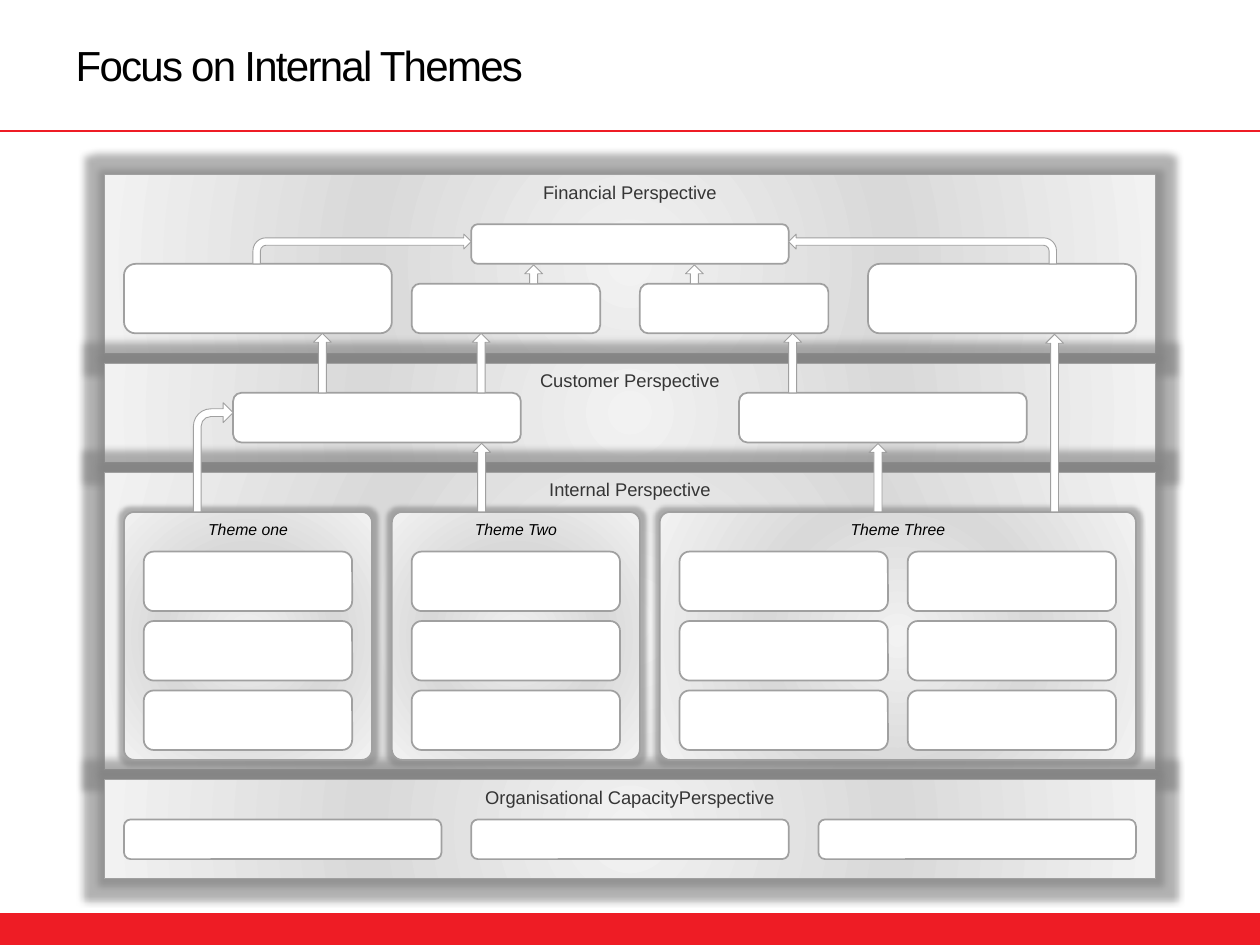
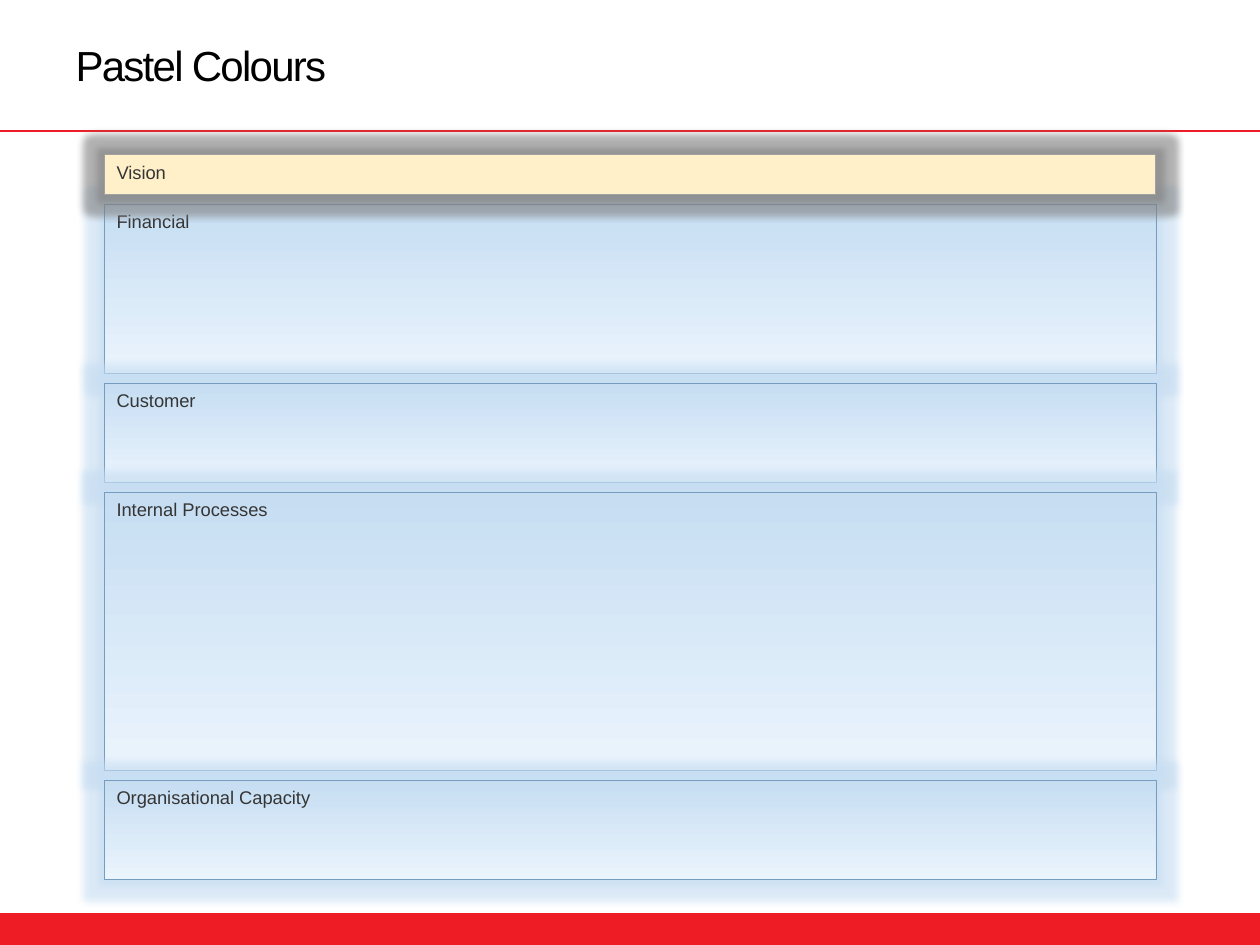
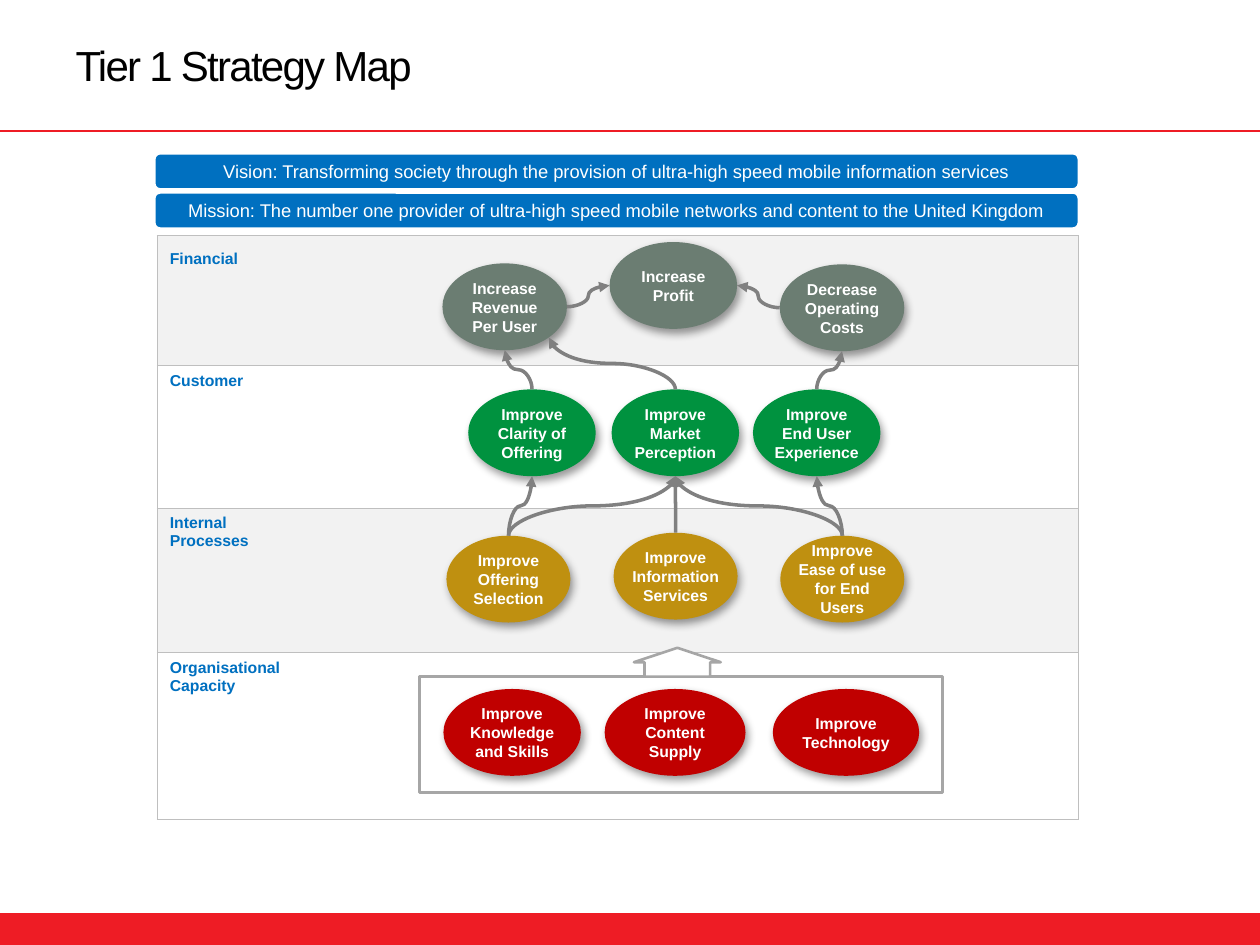
from pptx import Presentation
from pptx import util as u
from pptx.dml.color import RGBColor
from pptx.enum import shapes, text
from pptx.oxml import parse_xml
from pptx.oxml.ns import nsdecls, qn

RED, BLUE, WHITE, BLACK = "EE1C25", "0070C0", "FFFFFF", "000000"
GREY_LINE, DARK_TEXT = "A0A0A0", "353535"
SILVER = [(0, "F2F2F2"), (50, "D9D9D9"), (100, "F2F2F2")]
PASTEL = [(0, "C6DDF2"), (100, "EAF4FD")]
RADIAL = ('<a:path path="circle"><a:fillToRect l="50000" t="50000" '
          'r="50000" b="50000"/></a:path>')
DOWNWARD = '<a:lin ang="5400000" scaled="0"/>'
KIND = shapes.MSO_SHAPE
CENTER, LEFT = text.PP_ALIGN.CENTER, text.PP_ALIGN.LEFT
BAND_LEFT, BAND_WIDTH, BAND_GAP = 2.1, 21.2, 0.2


def rgb(value):
    return RGBColor.from_string(value)


def xml(tag, attributes="", content=""):
    return parse_xml(f'<a:{tag} {nsdecls("a")} {attributes}>{content}</a:{tag}>')


def tint(value, alpha):
    return f'<a:srgbClr val="{value}"><a:alpha val="{alpha * 1000}"/></a:srgbClr>'


def glow(value, points, alpha=60):
    return xml("glow", f'rad="{points * 12700}"', tint(value, alpha))


def soft_shadow():
    return xml("outerShdw", 'blurRad="63500" dist="38100" dir="3600000" '
               'algn="ctr" rotWithShape="0"', tint(BLACK, 40))


class Deck:
    def __init__(self):
        self.presentation = Presentation()
        self.presentation.slide_width = u.Cm(25.4)
        self.presentation.slide_height = u.Cm(19.05)
        self.slide = None

    def start(self, heading):
        """Open a slide with the title, the rule and the footer band."""
        self.slide = self.presentation.slides.add_slide(
            self.presentation.slide_layouts[5])
        self.shape(KIND.RECTANGLE, 0, 18.45, 25.4, 0.6, RED, RED, 2)
        self.line(shapes.MSO_CONNECTOR.STRAIGHT, (0, 2.64), (25.4, 2.64), RED, 1.5)
        title = self.slide.shapes.title
        title.left, title.top = u.Cm(1.27), u.Cm(0.38)
        title.width, title.height = u.Cm(18.52), u.Cm(1.83)
        frame = title.text_frame
        frame.auto_size = text.MSO_AUTO_SIZE.NONE
        frame.margin_top = frame.margin_bottom = 0
        self.label(frame, heading, 24, BLACK, LEFT, text.MSO_ANCHOR.MIDDLE)
        run = frame.paragraphs[0].runs[0]
        run._r.get_or_add_rPr().set("spc", "-100")

    def label(self, frame, words, size, color, align=CENTER,
              anchor=text.MSO_ANCHOR.TOP, bold=False, italic=False, margin=None):
        frame.word_wrap = True
        frame.vertical_anchor = anchor
        if margin is not None:
            frame.margin_left = frame.margin_right = u.Cm(margin)
            frame.margin_top = frame.margin_bottom = u.Cm(margin)
        self.add_runs(frame.paragraphs[0], words, size, color, align, bold, italic)

    def add_runs(self, paragraph, words, size, color, align, bold, italic=False):
        paragraph.alignment = align
        for number, line in enumerate(words.split("\n")):
            if number:
                paragraph.add_line_break()
            run = paragraph.add_run()
            run.text = line
            font = run.font
            font.name, font.size = "Arial", u.Pt(size)
            font.bold, font.italic = bold, italic
            font.color.rgb = rgb(color)

    def shape(self, kind, left, top, width, height, fill=WHITE, line=GREY_LINE,
              weight=1.0, adjust=(), effect=None):
        """Add a preset shape; fill is a hex colour or (stops, direction)."""
        item = self.slide.shapes.add_shape(
            kind, u.Cm(left), u.Cm(top), u.Cm(width), u.Cm(height))
        for index, value in enumerate(adjust):
            item.adjustments[index] = value
        if isinstance(fill, str):
            item.fill.solid()
            item.fill.fore_color.rgb = rgb(fill)
        else:
            self.gradient(item, *fill)
        if line:
            item.line.color.rgb = rgb(line)
            item.line.width = u.Pt(weight)
        else:
            item.line.fill.background()
        item.shadow.inherit = False
        if effect is not None:
            item.element.spPr.find(qn("a:effectLst")).append(effect)
        return item

    def gradient(self, item, stops, direction):
        item.fill.gradient()
        marks = "".join(f'<a:gs pos="{place * 1000}"><a:srgbClr val="{value}"/></a:gs>'
                        for place, value in stops)
        properties = item.element.spPr
        properties.replace(
            properties.find(qn("a:gradFill")),
            xml("gradFill", 'rotWithShape="1"', f"<a:gsLst>{marks}</a:gsLst>{direction}"))

    def bands(self, top, rows, fill, line, weight, halo, align):
        """Stack full-width perspective bands from (name, height) rows."""
        for name, height in rows:
            band = self.shape(KIND.RECTANGLE, BAND_LEFT, top, BAND_WIDTH, height,
                              fill, line, weight, effect=glow(halo, 8))
            self.label(band.text_frame, name, 10.5, DARK_TEXT, align)
            top += height + BAND_GAP

    def boxes(self, lefts, top, width, height):
        for left in lefts:
            self.shape(KIND.ROUNDED_RECTANGLE, left, top, width, height)

    def up_arrows(self, lefts, top, height):
        for left in lefts:
            self.shape(KIND.UP_ARROW, left, top, 0.36, height, weight=0.5,
                       adjust=(0.447, 0.5))

    def bent_arrow(self, left, top, width, height, adjust=(), mirrored=False):
        arrow = self.shape(KIND.BENT_ARROW, left, top, width, height,
                           weight=0.5, adjust=adjust)
        if mirrored:
            arrow.element.spPr.find(qn("a:xfrm")).set("flipH", "1")

    def line(self, kind, start, end, color, weight):
        points = [u.Cm(value) for value in (*start, *end)]
        connector = self.slide.shapes.add_connector(kind, *points)
        connector.line.color.rgb = rgb(color)
        connector.line.width = u.Pt(weight)
        connector.element.spPr.append(xml("effectLst"))
        return connector

    def curved_arrow(self, start, end, upright):
        """Draw an S-curve; an upright one leaves and arrives vertically."""
        (x1, y1), (x2, y2) = start, end
        turn = 1 if x2 >= x1 else -1
        if upright:
            middle_x, middle_y = (x1 + x2) / 2, (y1 + y2) / 2
            reach, spread = turn * (y1 - y2) / 2, abs(x2 - x1) / 2
            start = middle_x + reach, middle_y + spread
            end = middle_x - reach, middle_y - spread
        connector = self.line(shapes.MSO_CONNECTOR.CURVE, start, end, "808080", 2)
        properties = connector.element.spPr
        if upright:
            properties.find(qn("a:xfrm")).set(
                "rot", "5400000" if turn > 0 else "16200000")
        properties.find(qn("a:ln")).append(xml("tailEnd", 'type="triangle"'))

    def banner(self, words, top):
        strip = self.shape(KIND.ROUNDED_RECTANGLE, 3.12, top, 18.62, 0.71,
                           BLUE, WHITE, adjust=(0.152,))
        self.label(strip.text_frame, words, 10.5, WHITE, anchor=text.MSO_ANCHOR.MIDDLE)

    def objective(self, words, left, top, width, height, fill):
        oval = self.shape(KIND.OVAL, left, top, width, height, fill, None,
                          effect=soft_shadow())
        self.label(oval.text_frame, words, 9, WHITE, anchor=text.MSO_ANCHOR.MIDDLE,
                   bold=True, margin=0)

    def perspective_table(self, rows, left, top, width):
        total = sum(height for _, height in rows)
        table = self.slide.shapes.add_table(
            len(rows), 1, u.Cm(left), u.Cm(top), u.Cm(width), u.Cm(total)).table
        table.first_row = table.horz_banding = False
        for index, (name, height) in enumerate(rows):
            table.rows[index].height = u.Cm(height)
            cell = table.cell(index, 0)
            cell.margin_top = u.Cm(0.13 if index else 0.3)
            self.add_runs(cell.text_frame.paragraphs[0], name, 9, BLUE, LEFT, True)
            properties = cell._tc.get_or_add_tcPr()
            for side in ("lnL", "lnR", "lnT", "lnB"):
                properties.append(xml(
                    side, 'w="6350"',
                    '<a:solidFill><a:srgbClr val="BFBFBF"/></a:solidFill>'))
            cell.fill.solid()
            cell.fill.fore_color.rgb = rgb(WHITE if index % 2 else "F2F2F2")


def internal_themes(deck):
    deck.start("Focus on Internal Themes")
    silver = (SILVER, RADIAL)
    deck.bands(3.52, [("Financial Perspective", 3.6), ("Customer Perspective", 2),
                      ("Internal Perspective", 6),
                      ("Organisational CapacityPerspective", 2)],
               silver, GREY_LINE, 0.5, "808080", CENTER)
    for name, left, width in [("Theme one", 2.5, 5), ("Theme Two", 7.9, 5),
                              ("Theme Three", 13.3, 9.6)]:
        theme = deck.shape(KIND.ROUNDED_RECTANGLE, left, 10.32, width, 5, silver,
                           adjust=(0.042,), effect=glow("808080", 5))
        deck.label(theme.text_frame, name, 9, BLACK, italic=True, margin=0.1)

    deck.boxes([9.5], 4.52, 6.4, 0.8)
    deck.boxes([2.5, 17.5], 5.32, 5.4, 1.4)
    deck.boxes([8.3, 12.9], 5.72, 3.8, 1)
    deck.boxes([4.7, 14.9], 7.92, 5.8, 1)
    for row in range(3):
        deck.boxes([2.9, 8.3, 13.7, 18.3], 11.12 + 1.4 * row, 4.2, 1.2)
    deck.boxes([2.5, 9.5, 16.5], 16.52, 6.4, 0.8)

    deck.bent_arrow(5.1, 4.72, 4.4, 0.6)
    deck.bent_arrow(15.9, 4.72, 5.4, 0.6, mirrored=True)
    deck.bent_arrow(3.9, 8.12, 0.8, 2.2, (0.196, 0.25, 0.25, 0.438))
    deck.up_arrows([6.32, 9.52, 15.8], 6.72, 1.2)
    deck.up_arrows([21.08], 6.74, 3.58)
    deck.up_arrows([9.53, 17.52], 8.94, 1.38)
    deck.up_arrows([10.58, 13.82], 5.34, 0.38)


def pastel_colours(deck):
    deck.start("Pastel Colours")
    deck.bands(4.12, [("Financial", 3.4), ("Customer", 2),
                      ("Internal Processes", 5.6), ("Organisational Capacity", 2)],
               (PASTEL, DOWNWARD), "769DC0", 0.25, "C6DDF2", LEFT)
    deck.bands(3.12, [("Vision", 0.8)], "FFF0C9", GREY_LINE, 0.5, "808080", LEFT)


def strategy_map(deck):
    deck.start("Tier 1 Strategy Map")
    deck.perspective_table([("Financial", 2.62), ("Customer", 2.87),
                            ("Internal\nProcesses", 2.92),
                            ("Organisational\nCapacity", 3.35)], 3.17, 4.75, 18.57)
    deck.shape(KIND.RECTANGLE, 8.46, 13.64, 10.54, 2.34, WHITE, "A6A6A6", 1.5)
    deck.banner("Vision: Transforming society through the provision of "
                "ultra-high speed mobile information services", 3.1)
    deck.banner("Mission: The number one provider of ultra-high speed mobile "
                "networks and content to the United Kingdom", 3.89)

    financial, customer, internal, capacity = "6B7D72", "00923F", "BF9010", "C00000"
    height = 1.75
    objectives = {
        "revenue": ("Increase Revenue Per User", 8.92, 5.31, 2.51, financial),
        "profit": ("Increase Profit", 12.29, 4.88, 2.57, financial),
        "costs": ("Decrease Operating Costs", 15.72, 5.33, 2.51, financial),
        "clarity": ("Improve Clarity of Offering", 9.44, 7.85, 2.57, customer),
        "market": ("Improve Market Perception", 12.33, 7.85, 2.57, customer),
        "experience": ("Improve End User Experience", 15.18, 7.85, 2.57, customer),
        "selection": ("Improve Offering Selection", 9, 10.8, 2.5, internal),
        "services": ("Improve Information Services", 12.37, 10.74, 2.5, internal),
        "ease": ("Improve Ease of use for End Users", 15.73, 10.8, 2.5, internal),
        "skills": ("Improve Knowledge and Skills", 8.94, 13.89, 2.77, capacity),
        "content": ("Improve Content Supply", 12.19, 13.89, 2.84, capacity),
        "technology": ("Improve Technology", 15.58, 13.89, 2.95, capacity),
    }
    for words, left, top, width, fill in objectives.values():
        deck.objective(words, left, top, width, height, fill)

    above, below, before, after = (0, -1), (0, 1), (-1, 0), (1, 0)
    lower_right = (0.71, 0.71)

    def edge(name, side):
        """Point on the rim of an objective in the given direction."""
        _, left, top, width, _ = objectives[name]
        return left + width / 2 * (1 + side[0]), top + height / 2 * (1 + side[1])

    for source, leaving, target, arriving in [
            ("ease", above, "market", below),
            ("selection", above, "clarity", below),
            ("services", above, "market", below),
            ("clarity", above, "revenue", below),
            ("experience", above, "costs", below),
            ("market", above, "revenue", lower_right),
            ("revenue", after, "profit", before),
            ("costs", before, "profit", after),
            ("ease", above, "experience", below),
            ("selection", above, "market", below)]:
        deck.curved_arrow(edge(source, leaving), edge(target, arriving),
                          upright=leaving == above)
    deck.shape(KIND.UP_ARROW, 12.78, 13.06, 1.75, 0.58, WHITE, "A6A6A6", 1.5,
               adjust=(0.757, 0.5))


def main():
    deck = Deck()
    internal_themes(deck)
    pastel_colours(deck)
    strategy_map(deck)
    deck.presentation.save("out.pptx")


if __name__ == "__main__":
    main()
